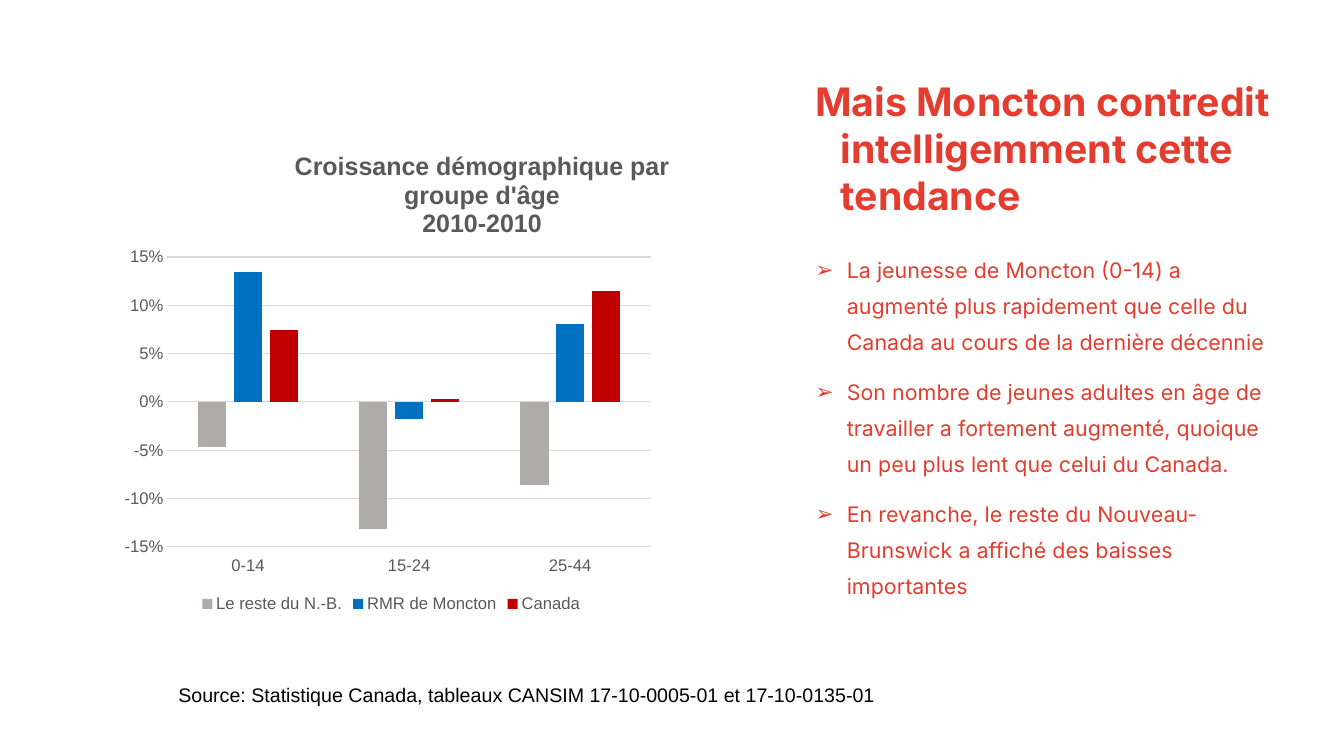
from pptx import Presentation
from pptx.chart.data import CategoryChartData
from pptx.dml.color import RGBColor
from pptx.enum.chart import XL_CHART_TYPE, XL_LEGEND_POSITION, XL_TICK_LABEL_POSITION, XL_TICK_MARK
from pptx.enum.text import PP_ALIGN
from pptx.oxml import parse_xml
from pptx.oxml.ns import nsdecls
from pptx.util import Inches, Pt

HEADING = "Mais Moncton contredit intelligemment cette tendance"
POINTS = [
    "La jeunesse de Moncton (0-14) a augmenté plus rapidement que celle du Canada "
    "au cours de la dernière décennie",
    "Son nombre de jeunes adultes en âge de travailler a fortement augmenté, quoique "
    "un peu plus lent que celui du Canada.",
    "En revanche, le reste du Nouveau-Brunswick a affiché des baisses importantes",
]
SOURCE = "Source: Statistique Canada, tableaux CANSIM 17-10-0005-01 et 17-10-0135-01"
CHART_TITLE = ["Croissance démographique par groupe d'âge", "2010-2010"]
AGE_GROUPS = ["0-14", "15-24", "25-44"]
GROWTH = [
    ("Le reste du N.-B.", (-0.047, -0.131, -0.086), "AFABAB"),
    ("RMR de Moncton", (0.134, -0.018, 0.081), "0070C0"),
    ("Canada", (0.074, 0.003, 0.115), "C00000"),
]

THEME = {
    "red": "E43D30",
    "grid": "D9D9D9",
    "heading": {"name": "Inter", "size": Pt(28), "bold": True, "color": "E43D30"},
    "point": {"name": "Inter", "size": Pt(15.3), "color": "E43D30"},
    "source": {"name": "Arial", "size": Pt(14), "color": "000000"},
    "chart title": {"name": "Arial", "size": Pt(18), "bold": True, "color": "595959"},
    "chart label": {"name": "Arial", "size": Pt(12), "bold": False, "color": "595959"},
}

# left, top, width, height in inches
HEADING_AREA = (7.74, 0.72, 5.09, 1.37)
POINTS_AREA = (7.74, 2.4, 5.09, 4.33)
CHART_AREA = (1.14, 1.27, 5.53, 4.85)
SOURCE_AREA = (1.67, 6.73, 8.17, 0.34)
# fractions of the chart area
TITLE_LAYOUT = {"x": 0.32, "y": 0.04}
PLOT_LAYOUT = {"x": 0.095, "y": 0.264, "w": 0.875, "h": 0.593}


def style_font(font, style):
    for name, value in THEME[style].items():
        if name == "color":
            font.color.rgb = RGBColor.from_string(value)
        else:
            setattr(font, name, value)


def set_attributes(target, values):
    for name, value in values.items():
        setattr(target, name, value)


def set_hanging(para, margin, indent):
    properties = para._p.get_or_add_pPr()
    properties.set("marL", str(Inches(margin)))
    properties.set("indent", str(Inches(indent)))
    return properties


def add_bullet(properties):
    for xml in (
        f'<a:buClr {nsdecls("a")}><a:srgbClr val="{THEME["red"]}"/></a:buClr>',
        f'<a:buFont {nsdecls("a")} typeface="Arial"/>',
        f'<a:buChar {nsdecls("a")} char="➢"/>',
    ):
        properties.append(parse_xml(xml))


def add_text(slide, area, lines, style, hanging=None, bullet=False, spacing=None):
    box = slide.shapes.add_textbox(*map(Inches, area))
    box.text_frame.word_wrap = True
    for number, line in enumerate(lines):
        para = box.text_frame.paragraphs[0] if number == 0 else box.text_frame.add_paragraph()
        if spacing:
            para.line_spacing = spacing
        if number:
            para.space_before = Pt(10)
        if hanging:
            properties = set_hanging(para, *hanging)
            if bullet:
                add_bullet(properties)
        span = para.add_run()
        span.text = line
        style_font(span.font, style)


def manual_layout(fractions, inner=False):
    target = '<c:layoutTarget val="inner"/>' if inner else ""
    modes = "".join(f'<c:{key}Mode val="edge"/>' for key in "xy")
    values = "".join(f'<c:{key} val="{value}"/>' for key, value in fractions.items())
    return parse_xml(
        f'<c:layout {nsdecls("c")}><c:manualLayout>{target}{modes}{values}'
        "</c:manualLayout></c:layout>"
    )


def replace_layout(parent, layout, position):
    for old in parent.findall(layout.tag):
        parent.remove(old)
    parent.insert(position, layout)


def add_chart_title(chart):
    chart.has_title = True
    title = chart.chart_title
    frame = title.text_frame
    for number, line in enumerate(CHART_TITLE):
        para = frame.paragraphs[0] if number == 0 else frame.add_paragraph()
        para.alignment = PP_ALIGN.CENTER
        span = para.add_run()
        span.text = line
        style_font(span.font, "chart title")
    replace_layout(title._element, manual_layout(TITLE_LAYOUT), 1)
    title.include_in_layout = False


def format_axes(chart):
    for axis in (chart.category_axis, chart.value_axis):
        set_attributes(axis, {
            "major_tick_mark": XL_TICK_MARK.NONE,
            "minor_tick_mark": XL_TICK_MARK.NONE,
        })
        style_font(axis.tick_labels.font, "chart label")
    chart.category_axis.tick_label_position = XL_TICK_LABEL_POSITION.LOW
    values = chart.value_axis
    set_attributes(values, {"minimum_scale": -0.15, "maximum_scale": 0.15, "major_unit": 0.05})
    set_attributes(values.tick_labels, {"number_format": "0%", "number_format_is_linked": False})
    values.format.line.fill.background()
    for line in (chart.category_axis.format.line, values.major_gridlines.format.line):
        line.color.rgb = RGBColor.from_string(THEME["grid"])
        line.width = Pt(0.75)


def add_growth_chart(slide):
    data = CategoryChartData(number_format="0.0%")
    data.categories = AGE_GROUPS
    for name, values, _ in GROWTH:
        data.add_series(name, values)
    chart = slide.shapes.add_chart(
        XL_CHART_TYPE.COLUMN_CLUSTERED, *map(Inches, CHART_AREA), data
    ).chart
    style_font(chart.font, "chart label")
    add_chart_title(chart)
    format_axes(chart)

    plot = chart.plots[0]
    set_attributes(plot, {"gap_width": 219, "overlap": -27, "vary_by_categories": False})
    for series, (_, _, color) in zip(plot.series, GROWTH):
        series.invert_if_negative = False
        series.format.fill.solid()
        series.format.fill.fore_color.rgb = RGBColor.from_string(color)
    replace_layout(chart._chartSpace.chart.plotArea, manual_layout(PLOT_LAYOUT, inner=True), 0)

    chart.has_legend = True
    set_attributes(chart.legend, {
        "position": XL_LEGEND_POSITION.BOTTOM,
        "include_in_layout": False,
    })
    style_font(chart.legend.font, "chart label")


def main():
    deck = Presentation()
    set_attributes(deck, {"slide_width": Inches(13.33), "slide_height": Inches(7.5)})
    slide = deck.slides.add_slide(deck.slide_layouts[6])
    add_text(slide, HEADING_AREA, [HEADING], "heading", hanging=(0.5, -0.25))
    add_text(slide, POINTS_AREA, POINTS, "point", hanging=(0.56, -0.31), bullet=True, spacing=1.4)
    add_growth_chart(slide)
    add_text(slide, SOURCE_AREA, [SOURCE], "source")
    deck.save("out.pptx")


if __name__ == "__main__":
    main()
